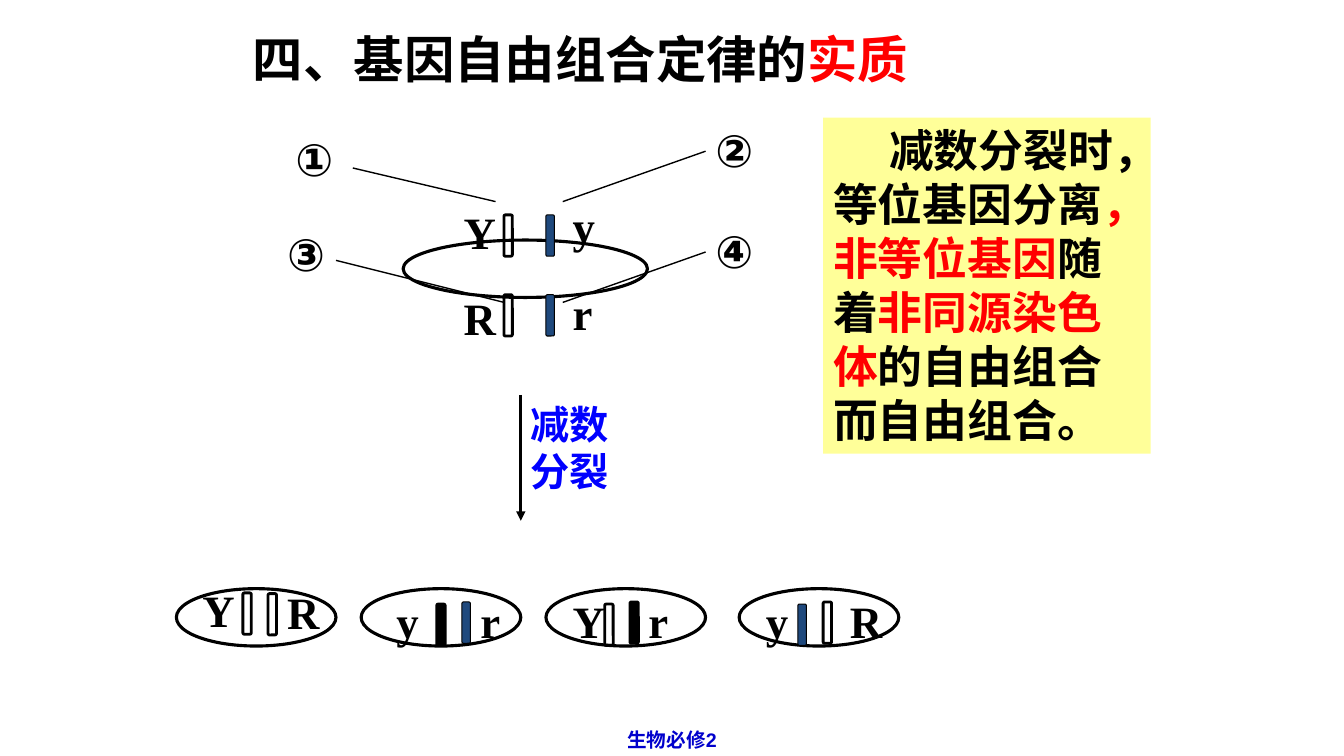
import pptx
import pptx.util
import pptx.dml.color
import pptx.enum.shapes
import pptx.enum.text
import pptx.oxml
import pptx.oxml.ns

Pt = pptx.util.Pt
MSO = pptx.enum.shapes.MSO_SHAPE
ALIGN = pptx.enum.text.PP_ALIGN
CJK = "Noto Sans CJK JP"
BLACK, RED, BLUE, NAVY = "000000", "FF0000", "0000FF", "1F497D"


def rgb(value):
    return pptx.dml.color.RGBColor.from_string(value)


def element(parent, tag, **attributes):
    child = pptx.oxml.parse_xml(f"<{tag} {pptx.oxml.ns.nsdecls('a')}/>")
    for name, value in attributes.items():
        child.set(name, value)
    parent.append(child)


class Diagram:
    """Draws the elements of the slide in one shared style."""

    def __init__(self, s):
        self.s = s

    def fill_text(self, tf, parts, size, font, align=ALIGN.LEFT, indent=0):
        p = tf.paragraphs[0]
        p.text = parts[0][0]
        for words, _ in parts[1:]:
            p.add_run().text = words
        p.alignment = align
        p.line_spacing = Pt(round(size * 1.206, 1))
        if indent:
            p._p.get_or_add_pPr().set("indent", str(Pt(indent)))
        colors = [color for words, color in parts for _ in words.split("\v")]
        for r, color in zip(p.runs, colors):
            r.font.size, r.font.bold, r.font.name = Pt(size), True, font
            r.font.color.rgb = rgb(color)
            element(r._r.get_or_add_rPr(), "a:ea", typeface=CJK)

    def text(self, x, y, w, h, parts, size=32, font="Montserrat", wrap=True, align=ALIGN.LEFT):
        tf = self.s.shapes.add_textbox(Pt(x), Pt(y), Pt(w), Pt(h)).text_frame
        tf.word_wrap = wrap
        self.fill_text(tf, parts, size, font, align)

    def gene(self, letter, x, y):
        width = {"y": 30, "r": 29}.get(letter, 37.5)
        self.text(x, y, width, 45.5, [(letter, BLACK)], font="Times New Roman", wrap=False)

    def shape(self, kind, x, y, w, h, fill=None, line=None):
        sp = self.s.shapes.add_shape(kind, Pt(x), Pt(y), Pt(w), Pt(h))
        sp.shadow.inherit = False
        if fill:
            sp.fill.solid()
            sp.fill.fore_color.rgb = rgb(fill)
        else:
            sp.fill.background()
        if line:
            sp.line.color.rgb = rgb(BLACK)
            sp.line.width = Pt(line)
        else:
            sp.line.fill.background()
        return sp

    def cell(self, x, y, w):
        self.shape(MSO.OVAL, x, y, w, 41, line=2.25)

    def chromosome(self, x, y, fill=None):
        line = 0.75 if fill == NAVY else 2
        self.shape(MSO.ROUNDED_RECTANGLE, x, y, 6, 29.5, fill, line)

    def line(self, x1, y1, x2, y2, width=1, arrow=False):
        c = self.s.shapes.add_connector(
            pptx.enum.shapes.MSO_CONNECTOR.STRAIGHT, Pt(x1), Pt(y1), Pt(x2), Pt(y2))
        c.line.color.rgb = rgb(BLACK)
        c.line.width = Pt(width)
        if arrow:
            element(c.line._get_or_add_ln(), "a:tailEnd", type="triangle")
        element(c._element.spPr, "a:effectLst")

    def note(self, x, y, w, h, parts):
        sp = self.shape(MSO.RECTANGLE, x, y, w, h, fill="FFFF99")
        tf = sp.text_frame
        tf.word_wrap = True
        tf.vertical_anchor = pptx.enum.text.MSO_ANCHOR.TOP
        self.fill_text(tf, parts, 32, "Times New Roman", indent=40)


def main():
    prs = pptx.Presentation()
    prs.slide_width, prs.slide_height = Pt(960), Pt(540)
    d = Diagram(prs.slides.add_slide(prs.slide_layouts[6]))

    d.text(173.5, 16, 636, 50.5, [("四、基因自由组合定律的", BLACK), ("实质", RED)], size=36)

    d.cell(288, 171.5, 174.5)
    for letter, x, y in [("Y", 324, 142.5), ("R", 324, 204), ("y", 402, 138.5), ("r", 402, 200)]:
        d.gene(letter, x, y)
    for y in (153.5, 210.5):
        d.chromosome(360, y)
        d.chromosome(390, y, NAVY)

    for ends in [(354, 144, 252, 120), (402, 144, 504, 108),
                 (402, 216, 504, 180), (360, 216, 240, 186)]:
        d.line(*ends)
    for mark, x, y in [("①", 204, 90), ("②", 504, 84), ("③", 198, 158.5), ("④", 504, 156)]:
        d.text(x, y, 66, 45.5, [(mark, BLACK)])

    d.line(372, 282, 372, 372, 2.25, arrow=True)
    d.text(372, 282, 132, 74, [("减数\v分裂", BLUE)], size=28, font=CJK)

    gametes = [
        (126, 173.5, (423.5, 424), (None, None), ("Y", 137.5, 412.5), ("R", 198, 414)),
        (258, 312, (431.5, 430), (BLACK, NAVY), ("y", 276, 420), ("r", 336, 420)),
        (390, 432, (431.5, 430), (None, BLACK), ("Y", 402, 420), ("r", 456, 420)),
        (528, 570, (431.5, 430), (NAVY, None), ("y", 540, 420), ("R", 600, 420)),
    ]
    for cell_x, bar_x, tops, fills, *genes in gametes:
        d.cell(cell_x, 420.5, 114)
        for i, (top, fill) in enumerate(zip(tops, fills)):
            d.chromosome(bar_x + 18 * i, top, fill)
        for gene in genes:
            d.gene(*gene)

    d.note(588, 84, 234, 240, [
        ("减数分裂时，等位基因分离", BLACK), ("，非等位基因", RED), ("随着", BLACK),
        ("非同源染色体", RED), ("的自由组合而自由组合。", BLACK)])
    d.text(270, 516, 420, 24, [("生物必修2", "0000CC")], size=14, font="Arial", align=ALIGN.CENTER)

    prs.save("out.pptx")


if __name__ == "__main__":
    main()
